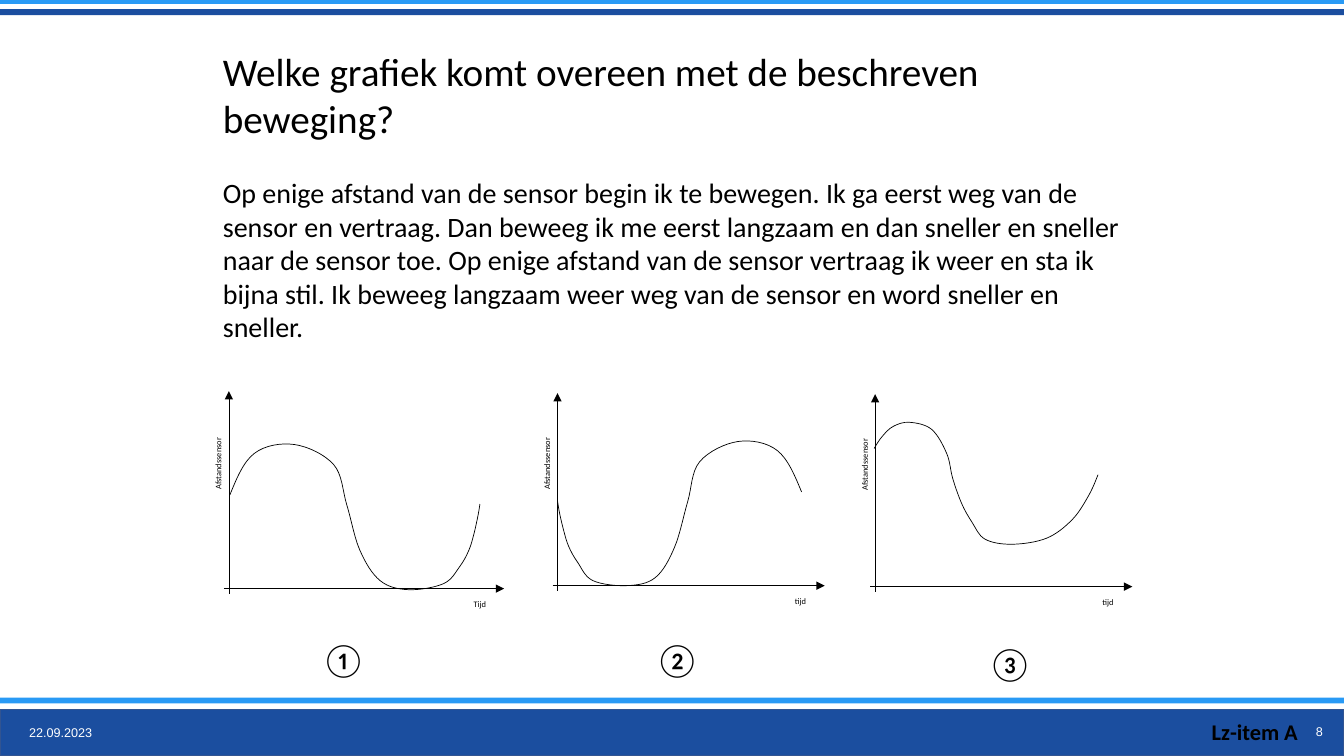
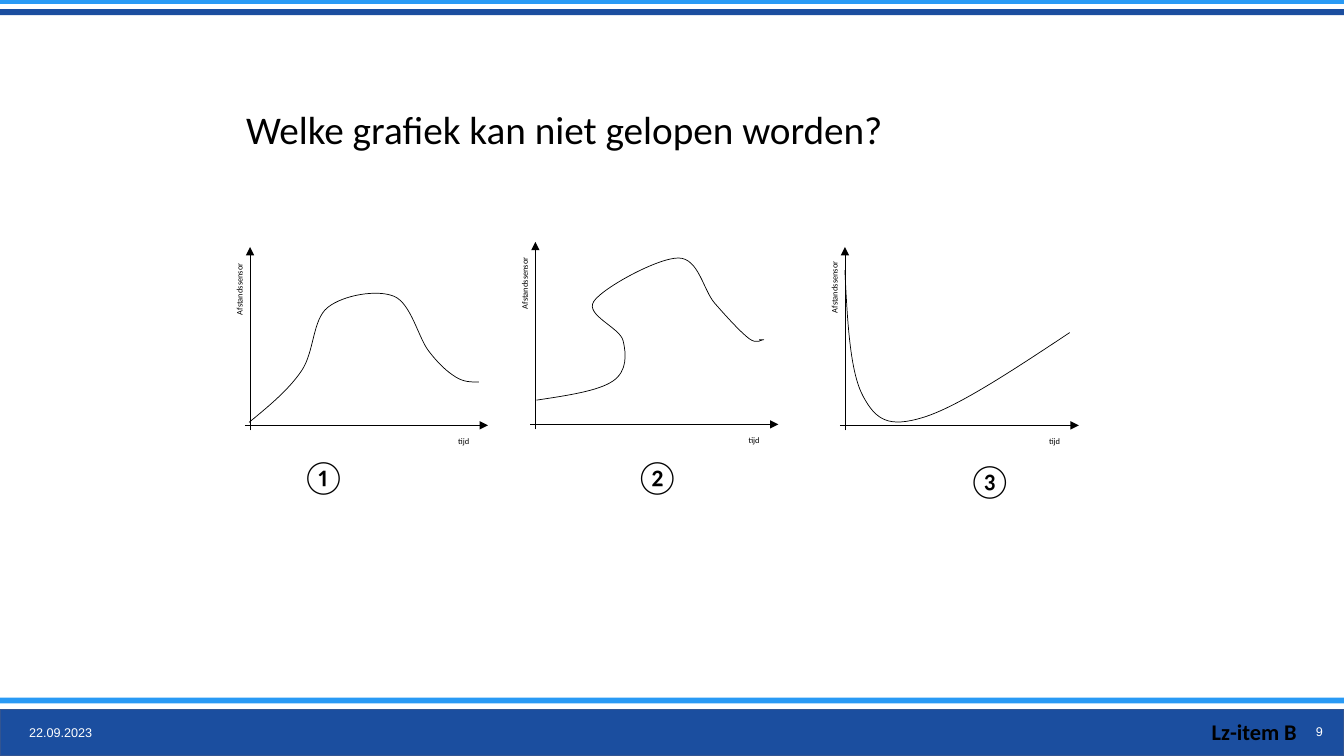
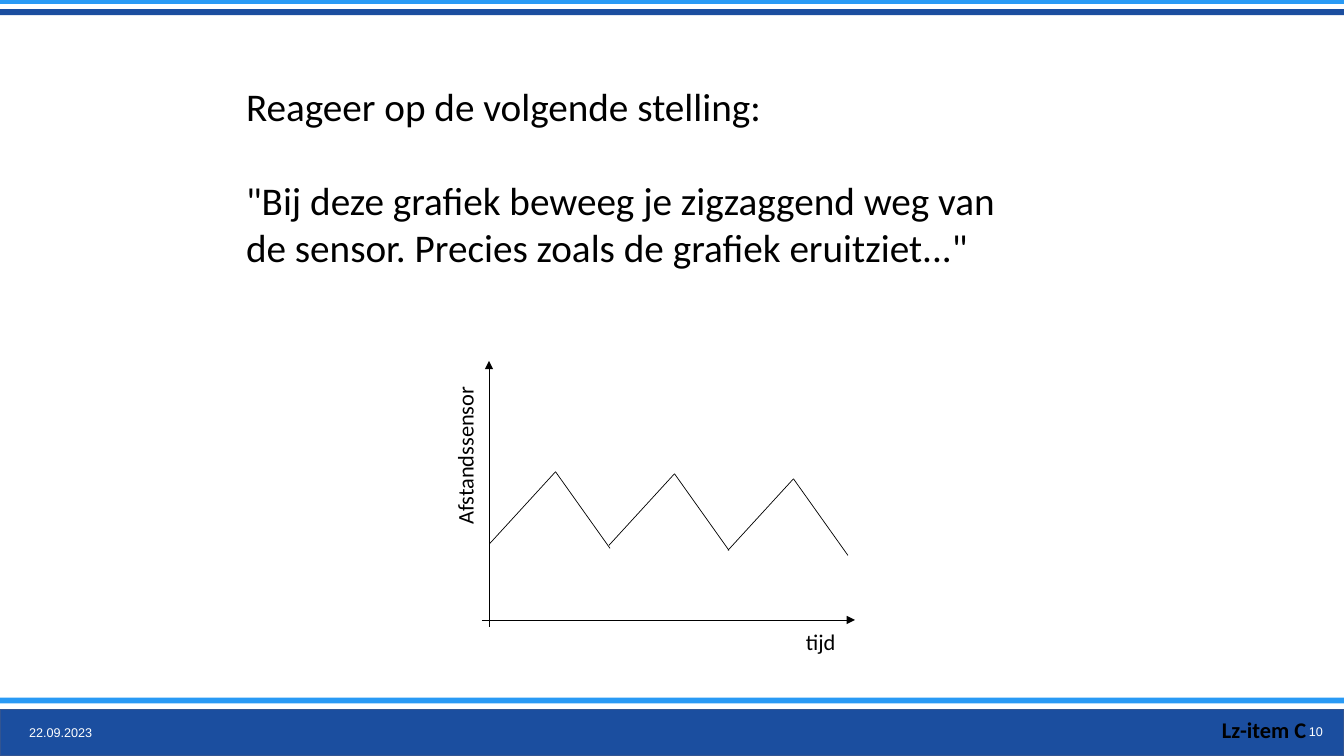
from dataclasses import dataclass
from pptx import Presentation
from pptx.dml.color import RGBColor
from pptx.enum.shapes import MSO_CONNECTOR, MSO_SHAPE
from pptx.enum.text import MSO_ANCHOR, MSO_AUTO_SIZE, PP_ALIGN
from pptx.oxml.ns import qn
from pptx.util import Pt
from lxml.etree import SubElement

PX = 9144
WIDE, HIGH = 1333, 750


@dataclass(frozen=True)
class Theme:
    ink: str = "000000"
    white: str = "FFFFFF"
    navy: str = "1B4E9F"
    sky: str = "299AF5"
    edge: str = "325491"
    main: str = "Calibri"
    foot: str = "Arial"
    head: int = 28
    body: int = 20
    mark: int = 24
    tag: int = 16
    note: int = 9


@dataclass(frozen=True)
class Look:
    size: int
    line: float
    tick: int
    gap: int
    shift: int
    drop: int


THEME = Theme()
SMALL = Look(size=6, line=0.25, tick=5, gap=11, shift=24, drop=15)
LARGE = Look(size=16, line=0.5, tick=7, gap=25, shift=34, drop=21)


def px(*nums):
    return [round(num * PX) for num in nums]


def rgb(code):
    return RGBColor.from_string(code)


def write(shape, words, size, font=THEME.main, color=THEME.ink, bold=False,
          align=PP_ALIGN.LEFT, anchor=MSO_ANCHOR.MIDDLE, inset=(10, 5), space=1.0):
    frame = shape.text_frame
    frame.word_wrap = True
    frame.auto_size = MSO_AUTO_SIZE.NONE
    frame.vertical_anchor = anchor
    side, edge = px(*inset)
    frame.margin_left = frame.margin_right = side
    frame.margin_top = frame.margin_bottom = edge
    para = frame.paragraphs[0]
    para.alignment = align
    para.line_spacing = space
    para.space_before = Pt(0)
    run = para.add_run()
    run.text = words
    run.font.size = Pt(size)
    run.font.name = font
    run.font.bold = bold
    run.font.color.rgb = rgb(color)


def label(slide, words, area, turn=0, **form):
    box = slide.shapes.add_textbox(*px(*area))
    box.rotation = turn
    write(box, words, **form)


def fill(holder, words, area, size):
    holder.left, holder.top, holder.width, holder.height = px(*area)
    write(holder, words, size, anchor=MSO_ANCHOR.TOP)
    props = holder.text_frame.paragraphs[0]._p.get_or_add_pPr()
    props.set("marL", "0")
    props.set("indent", "0")
    SubElement(props, qn("a:buNone"))


def band(master, slide, area, color, edge=None):
    bar = slide.shapes.add_shape(MSO_SHAPE.RECTANGLE, *px(*area))
    bar.shadow.inherit = False
    bar.fill.solid()
    bar.fill.fore_color.rgb = rgb(color)
    if edge:
        bar.line.color.rgb = rgb(edge)
        bar.line.width = Pt(1)
    else:
        bar.line.fill.background()
    master.shapes.element.insert(2, bar._element)


def bands(master, slide):
    band(master, slide, (0, 692, WIDE, 6), THEME.sky)
    band(master, slide, (0, 9, WIDE, 6), THEME.navy)
    band(master, slide, (0, 0, WIDE, 4), THEME.sky)
    band(master, slide, (0, 704, WIDE, 46), THEME.navy, THEME.edge)


def line(slide, start, end, width, arrow=False):
    link = slide.shapes.add_connector(MSO_CONNECTOR.STRAIGHT, *px(*start, *end))
    link.line.color.rgb = rgb(THEME.ink)
    link.line.width = Pt(width)
    if arrow:
        SubElement(link.line._get_or_add_ln(), qn("a:tailEnd"), type="triangle")
    SubElement(link._element.spPr, qn("a:effectLst"))


def bend(knots):
    def step(i):
        (ax, ay), (bx, by) = knots[i - 1], knots[i + 1]
        return (bx - ax) / 6, (by - ay) / 6

    last = len(knots) - 1
    points = []
    for i in range(last):
        (ax, ay), (bx, by) = knots[i], knots[i + 1]
        if i > 0:
            dx, dy = step(i)
            near = ax + dx, ay + dy
        if i + 1 < last:
            dx, dy = step(i + 1)
            far = bx - dx, by - dy
        else:
            far = (near[0] + bx) / 2, (near[1] + by) / 2
        if i == 0:
            near = (ax + far[0]) / 2, (ay + far[1]) / 2
        points += [near, far, (bx, by)]
    return points


def curve(slide, knots):
    pen = slide.shapes.build_freeform(*px(*knots[0]))
    pen.add_line_segments([px(*spot) for spot in bend(knots)], close=False)
    shape = pen.convert_to_shape()
    shape.shadow.inherit = False
    shape.fill.background()
    shape.line.color.rgb = rgb(THEME.ink)
    shape.line.width = Pt(0.5)
    route = next(shape._element.iter(qn("a:path")))
    parts = route.findall(qn("a:lnTo"))
    for i in range(0, len(parts), 3):
        cubic = SubElement(route, qn("a:cubicBezTo"))
        for part in parts[i:i + 3]:
            cubic.append(part[0])
            route.remove(part)


def axes(slide, x, y, top, right, mid, look=SMALL, time="tijd"):
    line(slide, (x, y + look.tick), (x, top), look.line, arrow=True)
    line(slide, (x - look.tick, y), (right, y), look.line, arrow=True)
    form = dict(size=look.size, align=PP_ALIGN.CENTER, inset=(0, 0), space=1.07)
    label(slide, "Afstandssensor", (x - look.gap - 95, mid - 25, 190, 50), turn=270, **form)
    label(slide, time, (right - look.shift - 30, y + look.drop - 15, 60, 30), **form)


def marks(slide, left, top):
    for sign, dx, dy in (("①", 0, 0), ("②", 331, 0), ("③", 661, 4)):
        label(slide, sign, (left + dx, top + dy, 86, 50), size=THEME.mark)


def footer(slide, num, tag, spot=(1192, 707)):
    form = dict(size=THEME.note, font=THEME.foot, color=THEME.white)
    label(slide, "22.09.2023", (19, 707, 103, 40), **form)
    label(slide, str(num), (1268, 706, 54, 40), align=PP_ALIGN.RIGHT, **form)
    label(slide, tag, (*spot, 130, 37), size=THEME.tag, bold=True)


def match(slide):
    fill(slide.shapes.title, "Welke grafiek komt overeen met de beschreven beweging?",
         (211, 42, 926, 104), THEME.head)
    fill(slide.placeholders[1],
         "Op enige afstand van de sensor begin ik te bewegen. Ik ga eerst weg van de "
         "sensor en vertraag. Dan beweeg ik me eerst langzaam en dan sneller en sneller "
         "naar de sensor toe. Op enige afstand van de sensor vertraag ik weer en sta ik "
         "bijna stil. Ik beweeg langzaam weer weg van de sensor en word sneller en sneller.",
         (211, 169, 926, 178), THEME.body)
    axes(slide, 227, 584, 388, 500, 460, time="Tijd")
    curve(slide, [(228, 491), (252, 450), (292, 441), (331, 461), (344, 501),
                  (357, 546), (377, 576), (405, 585), (440, 579), (456, 562),
                  (465, 546), (470, 530), (474, 512), (476, 500)])
    axes(slide, 553, 581, 390, 818, 460)
    curve(slide, [(795, 488), (771, 447), (732, 438), (694, 458), (682, 498),
                  (669, 543), (650, 573), (622, 581), (588, 576), (573, 558),
                  (564, 542), (559, 526), (555, 509), (553, 497)])
    axes(slide, 868, 582, 391, 1123, 461)
    curve(slide, [(867, 445), (875, 433), (886, 423), (902, 419), (924, 426),
                  (939, 450), (945, 475), (954, 500), (964, 518), (977, 535),
                  (1004, 540), (1038, 534), (1063, 516), (1079, 493), (1089, 471)])
    marks(slide, 309, 629)
    footer(slide, 8, "Lz-item A")


def walk(slide):
    fill(slide.shapes.title, "Welke grafiek kan niet gelopen worden?",
         (234, 99, 781, 57), THEME.head)
    axes(slide, 248, 422, 245, 484, 287)
    curve(slide, [(247, 419), (299, 368), (325, 305), (391, 294), (425, 348),
                  (452, 374), (475, 379)])
    axes(slide, 531, 421, 240, 772, 281)
    curve(slide, [(532, 397), (608, 378), (618, 338), (589, 299), (673, 256),
                  (709, 301), (743, 336), (757, 337), (753, 337)])
    axes(slide, 838, 422, 245, 1070, 285)
    curve(slide, [(838, 268), (856, 393), (916, 414), (1061, 330)])
    marks(slide, 289, 447)
    footer(slide, 9, "Lz-item B")


def claim(slide):
    fill(slide.shapes.title, "Reageer op de volgende stelling:",
         (234, 77, 781, 57), THEME.head)
    fill(slide.placeholders[1],
         "\"Bij deze grafiek beweeg je zigzaggend weg van de sensor. "
         "Precies zoals de grafiek eruitziet...\"",
         (234, 170, 781, 104), THEME.head)
    axes(slide, 485, 615, 358, 848, 452, LARGE)
    for x, y in ((486, 539), (604, 541), (722, 546)):
        peak = x + 65, y - 71
        line(slide, (x, y), peak, LARGE.line)
        line(slide, peak, (x + 119, y + 5), LARGE.line)
    footer(slide, 10, "Lz-item C", (1202, 705))


def main():
    deck = Presentation()
    deck.slide_width, deck.slide_height = px(WIDE, HIGH)
    for build, kind in ((match, 1), (walk, 5), (claim, 1)):
        build(deck.slides.add_slide(deck.slide_layouts[kind]))
    bands(deck.slide_master, deck.slides[0])
    deck.save("out.pptx")


if __name__ == "__main__":
    main()
